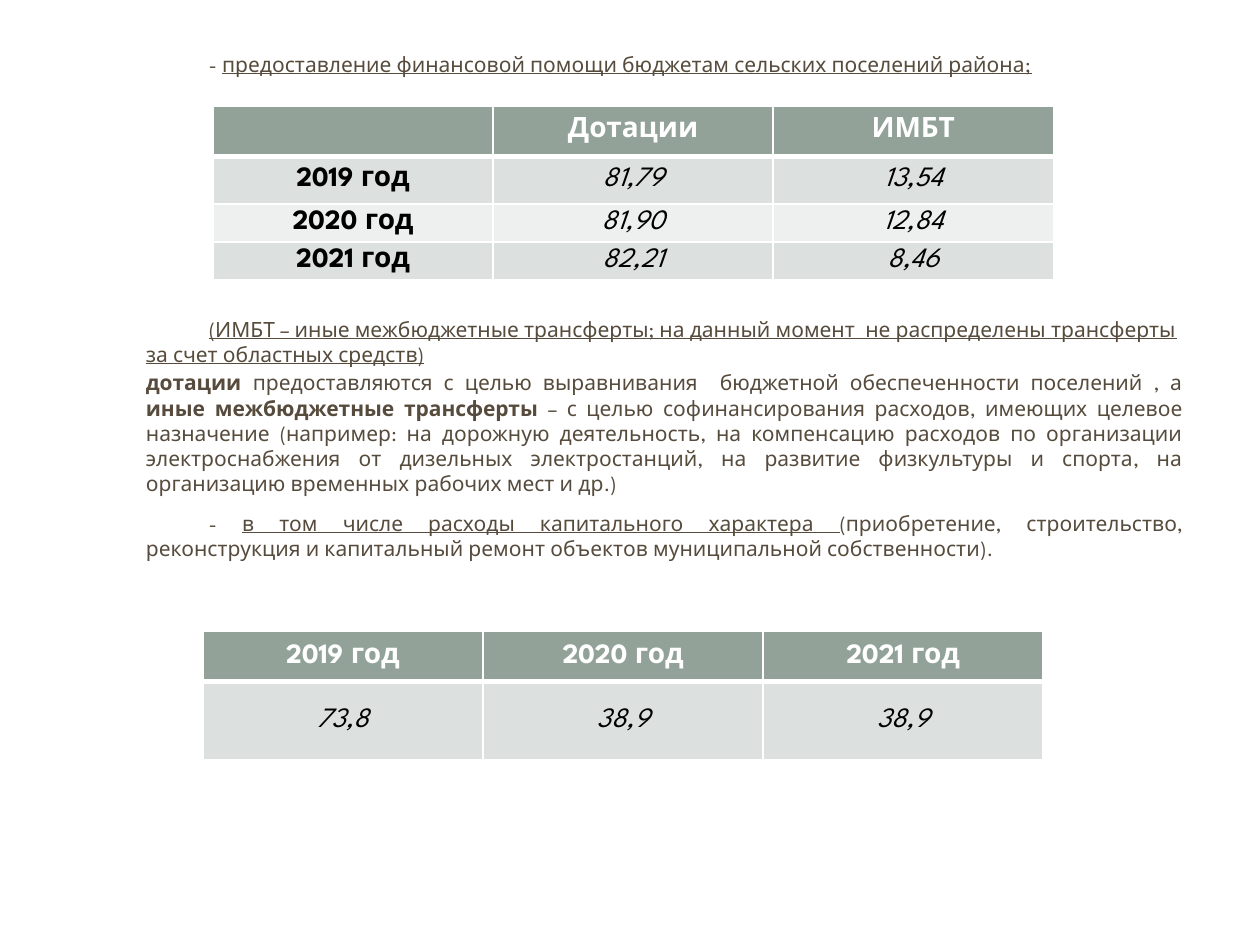
from lxml import etree
from pptx import Presentation
from pptx.dml.color import RGBColor
from pptx.enum.text import MSO_ANCHOR, PP_ALIGN
from pptx.oxml.ns import qn
from pptx.util import Inches, Pt

LEFT, CENTER, JUSTIFY = PP_ALIGN.LEFT, PP_ALIGN.CENTER, PP_ALIGN.JUSTIFY
MIDDLE = MSO_ANCHOR.MIDDLE

THEME = {
    "font": "League Spartan",
    "body_size": 12, "table_size": 16,
    "body": "564B3C", "header_text": "FFFFFF", "cell_text": "000000",
    "header": "93A299", "bands": ("DCE0DE", "EEF0EF"),
    "border": "FFFFFF", "border_width": 1, "header_rule": 3,
}

# Run styles
PLAIN, BOLD, UNDERLINE, ITALIC = {}, {"bold": True}, {"underline": True}, {"italic": True}

# Content: paragraphs are (alignment, first-line indent, space after, runs)
AID_INTRO = [
    (LEFT, 0.5, 0, [
        ("- ", PLAIN),
        ("предоставление финансовой помощи бюджетам сельских поселений района;", UNDERLINE)]),
]
EXPLANATION = [
    (LEFT, 0.5, 0, [
        ("(ИМБТ – иные межбюджетные трансферты; на данный момент  не распределены "
         "трансферты за счет областных средств)", UNDERLINE)]),
    (JUSTIFY, 0, 6, [
        ("дотации ", BOLD),
        ("предоставляются с целью выравнивания  бюджетной обеспеченности поселений , а ", PLAIN),
        ("иные межбюджетные трансферты ", BOLD),
        ("– с целью софинансирования расходов, имеющих целевое назначение (например: на "
         "дорожную деятельность, на компенсацию расходов по организации электроснабжения "
         "от дизельных электростанций, на развитие физкультуры и спорта, на организацию "
         "временных рабочих мест и др.)", PLAIN)]),
    (JUSTIFY, 0.5, 0, [
        ("- ", PLAIN),
        ("в том числе расходы капитального характера ", UNDERLINE),
        ("(приобретение, строительство, реконструкция и капитальный ремонт объектов "
         "муниципальной собственности).", PLAIN)]),
]
TRANSFERS = [
    ("", "Дотации", "ИМБТ"),
    ("2019 год", "81,79", "13,54"),
    ("2020 год", "81,90", "12,84"),
    ("2021 год", "82,21", "8,46"),
]
CAPITAL_COSTS = [
    ("2019 год", "2020 год", "2021 год"),
    ("73,8", "38,9", "38,9"),
]

# Layout in inches
TEXT_LEFT, TEXT_WIDTH = 1.06, 8.43
TABLE_WIDTH = 6.67
TEXT_BLOCKS = [(0.36, 0.35, AID_INTRO), (2.46, 2.1, EXPLANATION)]
TABLES = [
    (1.69, 0.84, (0.4, 0.38, 0.3, 0.3), TRANSFERS),
    (1.61, 5.01, (0.4, 0.62), CAPITAL_COSTS),
]


def add_run(paragraph, text, size, color, style):
    run = paragraph.add_run()
    run.text = text
    font = run.font
    font.color.rgb = RGBColor.from_string(color)
    formats = {"name": THEME["font"], "size": Pt(size), **style}
    for attribute, value in formats.items():
        setattr(font, attribute, value)


def add_text_block(slide, top, height, paragraphs):
    frame = slide.shapes.add_textbox(
        Inches(TEXT_LEFT), Inches(top), Inches(TEXT_WIDTH), Inches(height)).text_frame
    frame.word_wrap = True
    for index, (alignment, indent, after, runs) in enumerate(paragraphs):
        paragraph = frame.add_paragraph() if index else frame.paragraphs[0]
        formats = {"alignment": alignment, "line_spacing": 1.0,
                   "space_before": Pt(2), "space_after": Pt(after)}
        for attribute, value in formats.items():
            setattr(paragraph, attribute, value)
        paragraph._p.get_or_add_pPr().set("indent", str(Inches(indent)))
        for text, style in runs:
            add_run(paragraph, text, THEME["body_size"], THEME["body"], style)


def add_borders(cell, widths):
    properties = cell._tc.get_or_add_tcPr()
    for side in ("L", "R", "T", "B"):
        width = widths.get(side, THEME["border_width"])
        line = etree.SubElement(properties, qn(f"a:ln{side}"), w=str(Pt(width)))
        fill = etree.SubElement(line, qn("a:solidFill"))
        etree.SubElement(fill, qn("a:srgbClr"), val=THEME["border"])


def add_year_table(slide, left, top, row_heights, rows):
    columns = len(rows[0])
    table = slide.shapes.add_table(
        len(rows), columns, Inches(left), Inches(top),
        Inches(TABLE_WIDTH), Inches(sum(row_heights))).table
    for column in table.columns:
        column.width = Inches(TABLE_WIDTH / columns)
    for r, (height, values) in enumerate(zip(row_heights, rows)):
        table.rows[r].height = Inches(height)
        is_header = r == 0
        fill = THEME["header"] if is_header else THEME["bands"][(r - 1) % 2]
        color = THEME["header_text" if is_header else "cell_text"]
        # The thick rule lies between the header and the first data row
        rule = {0: {"B": THEME["header_rule"]}, 1: {"T": THEME["header_rule"]}}.get(r, {})
        for c, value in enumerate(values):
            cell = table.cell(r, c)
            add_borders(cell, rule)
            cell.fill.solid()
            cell.fill.fore_color.rgb = RGBColor.from_string(fill)
            formats = {"vertical_anchor": MIDDLE, "margin_top": 0, "margin_bottom": 0}
            for attribute, setting in formats.items():
                setattr(cell, attribute, setting)
            paragraph = cell.text_frame.paragraphs[0]
            paragraph.alignment = CENTER
            if value:
                style = BOLD if is_header or value.endswith("год") else {"bold": False, **ITALIC}
                add_run(paragraph, value, THEME["table_size"], color, style)


def main():
    presentation = Presentation()
    presentation.slide_width, presentation.slide_height = Inches(10), Inches(7.5)
    slide = presentation.slides.add_slide(presentation.slide_layouts[6])
    # Explanatory text
    for block in TEXT_BLOCKS:
        add_text_block(slide, *block)
    # Figures by year
    for year_table in TABLES:
        add_year_table(slide, *year_table)
    presentation.save("out.pptx")


if __name__ == "__main__":
    main()
